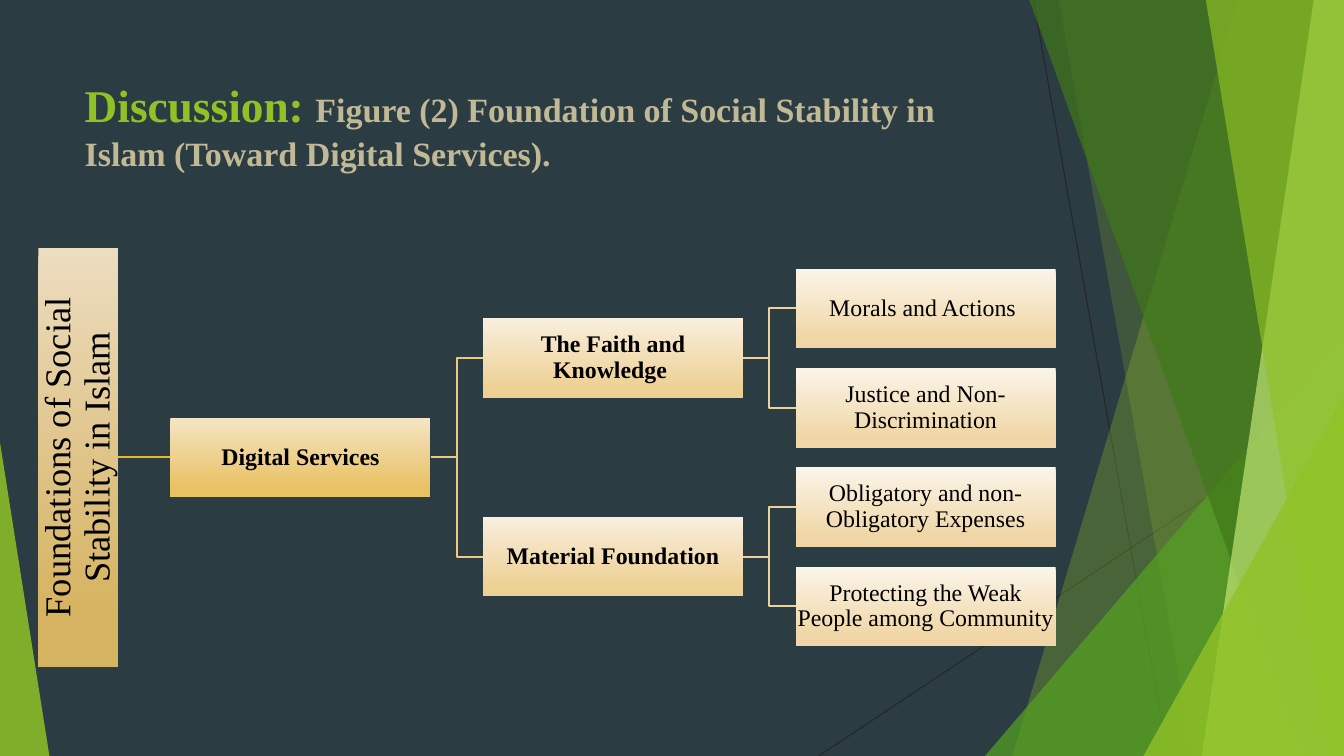
from dataclasses import dataclass

import lxml.etree
import pptx
import pptx.dml.color
import pptx.enum.shapes
import pptx.enum.text
import pptx.oxml.ns
import pptx.shapes.autoshape
import pptx.shapes.connector
import pptx.slide
import pptx.util

Inches = pptx.util.Inches
Shape = pptx.shapes.autoshape.Shape
Slide = pptx.slide.Slide
SHAPES = pptx.enum.shapes.MSO_SHAPE
CONNECTORS = pptx.enum.shapes.MSO_CONNECTOR
WIDTH, HEIGHT = 13.33, 7.5


@dataclass(frozen=True)
class Theme:
    font: str = "Times New Roman"
    background: str = "2C3C43"
    green: str = "90C226"
    mid_green: str = "54A021"
    dark_green: str = "3F7819"
    pale_green: str = "C0E474"
    hairline: str = "262626"
    sand: str = "C1B995"
    ink: str = "000000"
    heading_size: float = 32.4
    subtitle_size: float = 24.3
    root_size: float = 26
    box_size: float = 17
    # One entry per level of the tree
    gradients: tuple = (("ECDCC0", "D6B360"), ("F5E5C6", "E9C264"),
                        ("F9EFDE", "EDD094"), ("FBF5E9", "F0D6A6"))
    # Lines leading into levels 1 to 3
    links: tuple = ("E6BA2C", "EBCA80", "EED198")


@dataclass(frozen=True)
class Grid:
    """Columns and rows of the tree, in inches."""
    left: float = 1.69
    column: float = 3.1
    first_row: float = 3.06
    row: float = 0.985
    box_width: float = 2.58
    box_height: float = 0.79
    root_left: float = 0.38
    root_height: float = 4.15


@dataclass(frozen=True)
class Shard:
    """Band from a slanted left edge to the right side of the slide."""
    top: float
    bottom: float
    color: str
    opacity: int


@dataclass(frozen=True)
class Spike:
    """Right triangle standing on the bottom of the slide."""
    left: float
    width: float
    height: float
    apex: float
    color: str
    opacity: int


@dataclass(frozen=True)
class Node:
    label: str
    row: float
    children: tuple = ()


THEME, GRID = Theme(), Grid()

HAIRLINES = ((10.25, 0, 11.58, HEIGHT), (WIDTH, 4.03, 8.12, HEIGHT))
DECORATION = (
    Shard(12.28, 10.04, THEME.green, 30),
    Shard(10.5, 11.83, THEME.green, 20),
    Spike(9.77, 3.56, 4.17, 1, THEME.mid_green, 72),
    Shard(10.21, 12.91, THEME.dark_green, 70),
    Shard(13.03, 11.92, THEME.pale_green, 70),
    Shard(11.96, 13.18, THEME.green, 65),
    Spike(11.34, 1.99, 3.57, 1, THEME.green, 80),
    Spike(0, 0.49, 3.11, 0, THEME.green, 85),
)
TREE = Node("Foundations of Social Stability in Islam", 1.5, (
    Node("Digital Services", 1.5, (
        Node("The Faith and Knowledge ", 0.5, (
            Node("Morals and Actions ", 0),
            Node("Justice and Non-Discrimination", 1))),
        Node("Material Foundation", 2.5, (
            Node("Obligatory and non-Obligatory Expenses", 2),
            Node("Protecting the Weak People among Community", 3))))),))


def rgb(color: str) -> pptx.dml.color.RGBColor:
    return pptx.dml.color.RGBColor.from_string(color)


def add_xml(parent: lxml.etree._Element, tag: str, **attributes: str) -> None:
    lxml.etree.SubElement(parent, pptx.oxml.ns.qn(tag), attributes)


def style_font(span, size: float, color: str, bold: bool) -> None:
    span.font.name = THEME.font
    span.font.size = pptx.util.Pt(size)
    span.font.bold = bold
    span.font.color.rgb = rgb(color)


def style_line(line: pptx.shapes.connector.Connector, color: str, width: float) -> None:
    line.line.color.rgb = rgb(color)
    line.line.width = pptx.util.Pt(width)
    add_xml(line.element.spPr, "a:effectLst")


def draw_decoration(page: Slide, part: Shard | Spike) -> None:
    if isinstance(part, Shard):
        corners = ((WIDTH, 0), (WIDTH, HEIGHT), (part.bottom, HEIGHT))
        builder = page.shapes.build_freeform(Inches(part.top), 0, scale=1.0)
        builder.add_line_segments([(Inches(x), Inches(y)) for x, y in corners], close=True)
        shape = builder.convert_to_shape()
    else:
        shape = page.shapes.add_shape(
            SHAPES.ISOSCELES_TRIANGLE, Inches(part.left), Inches(HEIGHT - part.height),
            Inches(part.width), Inches(part.height))
        shape.adjustments[0] = part.apex
    shape.shadow.inherit = False
    shape.fill.solid()
    shape.fill.fore_color.rgb = rgb(part.color)
    color = shape.element.spPr.find(".//" + pptx.oxml.ns.qn("a:srgbClr"))
    add_xml(color, "a:alpha", val=str(part.opacity * 1000))
    shape.line.fill.background()


def draw_box(page: Slide, node: Node, level: int) -> Shape:
    is_root = level == 0
    left = GRID.root_left if is_root else GRID.left + GRID.column * (level - 1)
    width = GRID.box_height if is_root else GRID.box_width
    height = GRID.root_height if is_root else GRID.box_height
    top = GRID.first_row + GRID.row * node.row - height / 2
    box = page.shapes.add_shape(
        SHAPES.RECTANGLE, Inches(left), Inches(top), Inches(width), Inches(height))
    box.shadow.inherit = False
    box.line.fill.background()
    box.fill.gradient()
    box.fill.gradient_angle = 270
    for stop, color, position in zip(box.fill.gradient_stops, THEME.gradients[level], (0, 0.88)):
        stop.color.rgb = rgb(color)
        stop.position = position

    frame = box.text_frame
    frame.text = node.label
    frame.word_wrap = True
    frame.vertical_anchor = pptx.enum.text.MSO_ANCHOR.MIDDLE
    inset = Inches(0.02 if is_root else 0.01)
    frame.margin_left = frame.margin_right = frame.margin_top = frame.margin_bottom = inset
    if is_root:
        box.element.txBody.bodyPr.set("vert", "vert270")
    para = frame.paragraphs[0]
    para.alignment = pptx.enum.text.PP_ALIGN.CENTER
    para.line_spacing = 0.9
    size = THEME.root_size if is_root else THEME.box_size
    style_font(para.runs[0], size, THEME.ink, bold=level in (1, 2))
    return box


def draw_tree(page: Slide, node: Node, level: int = 0) -> Shape:
    box = draw_box(page, node, level)
    for child in node.children:
        child_box = draw_tree(page, child, level + 1)
        kind = CONNECTORS.STRAIGHT if child.row == node.row else CONNECTORS.ELBOW
        link = page.shapes.add_connector(kind, 0, 0, 0, 0)
        link.begin_connect(box, 3)
        link.end_connect(child_box, 1)
        style_line(link, THEME.links[level], 1.5)
    return box


def draw_title(page: Slide) -> None:
    title = page.shapes.title
    title.left, title.top = Inches(0.74), Inches(0.67)
    title.width, title.height = Inches(9.4), Inches(0.96)
    frame = title.text_frame
    frame.word_wrap = True
    frame.auto_size = pptx.enum.text.MSO_AUTO_SIZE.NONE
    frame.vertical_anchor = pptx.enum.text.MSO_ANCHOR.TOP
    frame.margin_top = Inches(0.1)
    para = frame.paragraphs[0]
    para.alignment = pptx.enum.text.PP_ALIGN.LEFT
    for text, size, color in (
            ("Discussion: ", THEME.heading_size, THEME.green),
            ("Figure (2) Foundation of Social Stability in Islam (Toward Digital Services).",
             THEME.subtitle_size, THEME.sand)):
        span = para.add_run()
        span.text = text
        style_font(span, size, color, bold=True)


def main() -> None:
    deck = pptx.Presentation()
    deck.slide_width, deck.slide_height = Inches(WIDTH), Inches(HEIGHT)
    page = deck.slides.add_slide(deck.slide_layouts.get_by_name("Title Only"))
    page.background.fill.solid()
    page.background.fill.fore_color.rgb = rgb(THEME.background)

    # Green shards and hairlines at the edges
    for ends in HAIRLINES:
        line = page.shapes.add_connector(CONNECTORS.STRAIGHT, *map(Inches, ends))
        style_line(line, THEME.hairline, 0.75)
    for part in DECORATION:
        draw_decoration(page, part)

    # Heading and tree
    draw_title(page)
    draw_tree(page, TREE)
    deck.save("out.pptx")


if __name__ == "__main__":
    main()
